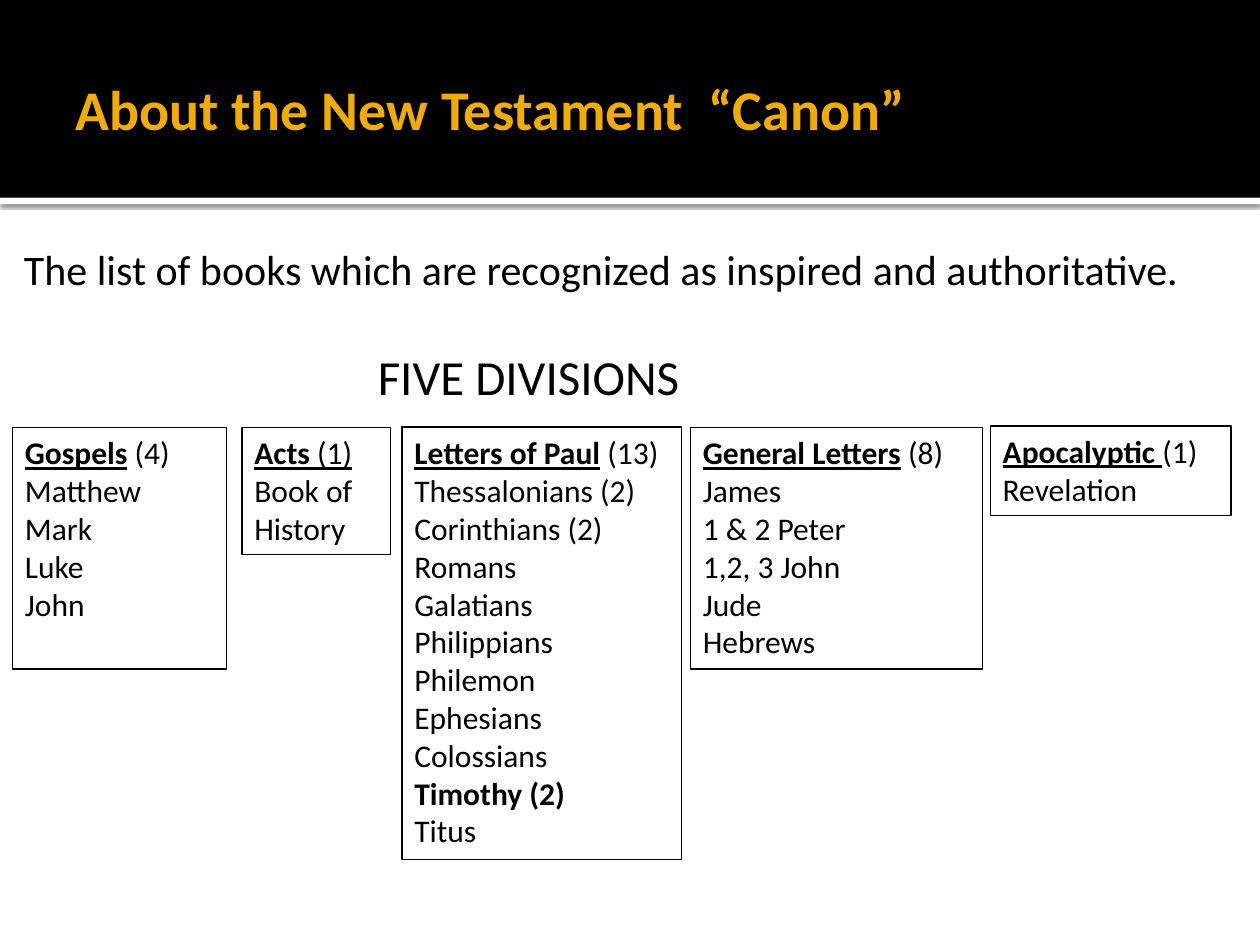
import pptx
import pptx.util
import pptx.dml.color
import pptx.enum.shapes
import pptx.enum.text
import pptx.oxml
import pptx.oxml.ns

HUES = {"ink": "000000", "paper": "FFFFFF", "gold": "F0AD00"}
WIDE, HIGH = 10, 7.5
COLS, ROWS = 100, 75  # grid of the slide
FONT = "Calibri"

# Head runs (text, bold, underline), then the books, for each box
CARDS = [
    ((1, 33.9, 17, 19.2), [("Gospels", True, True), (" (4)", False, False)],
     ["Matthew", "Mark", "Luke", "John"]),
    ((19.2, 33.9, 11.8, 10.1), [("Acts ", True, True), ("(1)", False, True)],
     ["Book of History"]),
    ((31.9, 33.9, 22.2, 34.3),
     [("Letters of Paul", True, True), (" (13)", False, False)],
     ["Thessalonians (2)", "Corinthians (2)", "Romans", "Galatians",
      "Philippians", "Philemon", "Ephesians", "Colossians", "Timothy (2)",
      "Titus"]),
    ((54.8, 33.9, 23.2, 19.2),
     [("General Letters", True, True), (" (8)", False, False)],
     ["James", "1 & 2 Peter", "1,2, 3 John", "Jude", "Hebrews"]),
    ((78.6, 33.8, 19.1, 7.1),
     [("Apocalyptic ", True, True), ("(1)", False, False)], ["Revelation"]),
]
STRONG = {"Timothy (2)"}


def color(name):
    return pptx.dml.color.RGBColor.from_string(HUES[name])


def place(box):
    """Turn grid columns and rows into lengths."""
    x, y, w, h = box
    col, row = WIDE / COLS, HIGH / ROWS
    return [pptx.util.Inches(v) for v in (x * col, y * row, w * col, h * row)]


def block(slide, box, fill=None, line=None):
    shape = slide.shapes.add_shape(
        pptx.enum.shapes.MSO_SHAPE.RECTANGLE, *place(box))
    shape.shadow.inherit = False
    if fill:
        shape.fill.solid()
        shape.fill.fore_color.rgb = color(fill)
    else:
        shape.fill.background()
    if line:
        shape.line.color.rgb = color(line)
        shape.line.width = pptx.util.Pt(0.75)
    else:
        shape.line.fill.background()
    return shape


def write(shape, paras, size, hue="ink", **form):
    """Fill a shape with paragraphs of (text, bold, underline) runs."""
    frame = shape.text_frame
    base = {"word_wrap": True,
            "vertical_anchor": pptx.enum.text.MSO_ANCHOR.TOP}
    for key, value in {**base, **form}.items():
        setattr(frame, key, value)
    for i, runs in enumerate(paras):
        para = frame.add_paragraph() if i else frame.paragraphs[0]
        para.alignment = pptx.enum.text.PP_ALIGN.LEFT
        for text, bold, under in runs:
            run = para.add_run()
            run.text = text
            look = {"name": FONT, "size": pptx.util.Pt(size),
                    "bold": bold, "underline": under}
            for key, value in look.items():
                setattr(run.font, key, value)
            run.font.color.rgb = color(hue)


def label(slide, box, text, size, hue="ink", bold=False, **form):
    shape = slide.shapes.add_textbox(*place(box))
    write(shape, [[(text, bold, False)]], size, hue, **form)


def shade(shape):
    """Cast a soft shadow straight down."""
    effects = shape._element.spPr.find(pptx.oxml.ns.qn("a:effectLst"))
    effects.append(pptx.oxml.parse_xml(
        f'<a:outerShdw {pptx.oxml.ns.nsdecls("a")} blurRad="31750" '
        'dist="10160" dir="5400000" algn="t" rotWithShape="0">'
        f'<a:srgbClr val="{HUES["ink"]}"><a:alpha val="60000"/></a:srgbClr>'
        '</a:outerShdw>'))


def banner(slide, box):
    x, y, w, h = box
    # White strip below the black band
    shade(block(slide, (x, y + h, w, 0.5), "paper"))
    block(slide, box, "ink")
    # Title
    label(slide, (x + 0.05 * w, y + 1.7, 0.9 * w, h - 2),
          "About the New Testament  “Canon”", 32, "gold", True,
          vertical_anchor=pptx.enum.text.MSO_ANCHOR.MIDDLE)


def intro(slide, box):
    x, y, w, h = box
    label(slide, (x, y, w, 0.4 * h),
          "The list of books which are recognized as inspired and "
          "authoritative.", 24,
          margin_left=pptx.util.Inches(0.19),
          margin_top=pptx.util.Inches(0.1))
    # Heading above the boxes
    label(slide, (x + 0.29 * w, y + 8.7, 0.31 * w, 5.7),
          "FIVE DIVISIONS", 28)


def card(slide, box, head, books):
    paras = [head] + [[(book, book in STRONG, False)] for book in books]
    write(block(slide, box, line="ink"), paras, 18)


def main():
    deck = pptx.Presentation()
    deck.slide_width = pptx.util.Inches(WIDE)
    deck.slide_height = pptx.util.Inches(HIGH)
    slide = deck.slides.add_slide(deck.slide_layouts[6])
    banner(slide, (0, 0, COLS, 15.7))
    intro(slide, (0, 18.3, COLS, 14.4))
    for box, head, books in CARDS:
        card(slide, box, head, books)
    deck.save("out.pptx")


if __name__ == "__main__":
    main()
